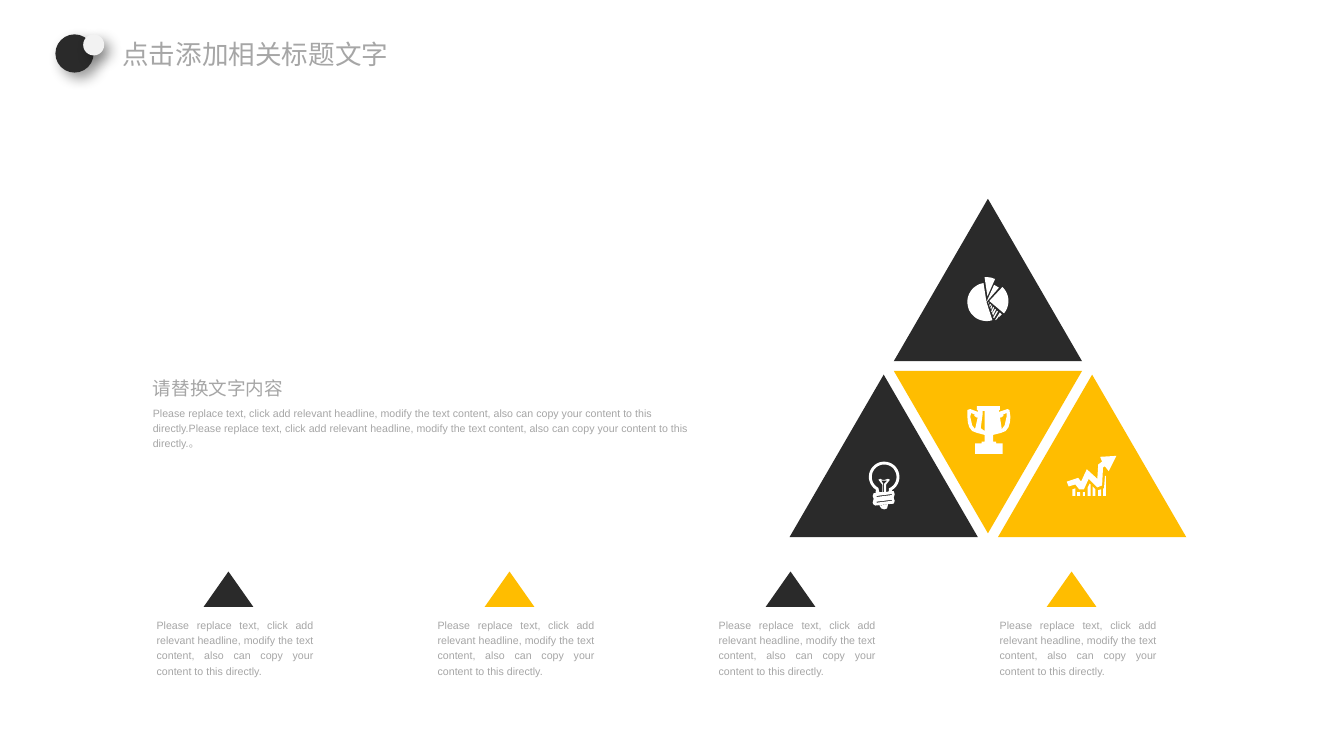
from dataclasses import dataclass
from math import cos, radians, sin

from lxml import etree
from pptx import Presentation
from pptx.dml.color import RGBColor
from pptx.enum.shapes import MSO_SHAPE
from pptx.enum.text import MSO_ANCHOR, MSO_AUTO_SIZE, PP_ALIGN
from pptx.oxml.ns import qn
from pptx.util import Inches, Pt

TRIANGLE = MSO_SHAPE.ISOSCELES_TRIANGLE
OVAL = MSO_SHAPE.OVAL
LEFT, JUSTIFY = PP_ALIGN.LEFT, PP_ALIGN.JUSTIFY
MIDDLE = MSO_ANCHOR.MIDDLE
NO_AUTOFIT = MSO_AUTO_SIZE.NONE
TITLE_ONLY = 5


@dataclass(frozen=True)
class Theme:
    """Colours, font and type sizes of the slide."""
    dark: str = "2A2A2A"
    gold: str = "FFBD00"
    white: str = "FFFFFF"
    pale: str = "F2F2F2"
    text: str = "A6A6A6"
    shadow: str = "000000"
    font: str = "Arial"
    title_size: int = 20
    heading_size: int = 14
    body_size: int = 8


THEME = Theme()
BODY = ("Please replace text, click add relevant headline, modify the text content, "
        "also can copy your content to this directly.")


def arc(x, y, radius, start, end, steps=30):
    """Return points along a circular arc, with angles in degrees."""
    angles = [radians(start + (end - start) * step / steps) for step in range(steps + 1)]
    return [(x + radius * cos(angle), y + radius * sin(angle)) for angle in angles]


PIE_CHART = [
    [(23, 25), *arc(23, 25, 20, -47, 40)],
    [(28, 8), (20, 26), *arc(20, 26, 20, 261, 72), (20, 26), (33, 11)],
    [(21, 20), (18, 0), (21, 0), (25, 0.5), (29, 2)],
    [(36, 39), (35, 38), (33, 42)],
    [(31, 44), (35, 38), (34, 37), (29, 45)],
    [(28, 43), (32, 36), (31, 35), (27, 42)],
    [(27, 40), (30, 34), (29, 33), (26, 38)],
    [(26, 37), (28, 32), (27, 31), (25, 36)],
    [(25, 34), (26, 30), (26, 29), (24, 32)],
    [(23, 31), (25, 29), (24, 28), (23, 29)],
    [(22, 28), (22, 26), (23, 27)],
]
TROPHY = [
    [(11, 4), (11, 6), (3, 3), (0, 4), (0, 11), (0.5, 17), (2, 22), (5, 26), (10, 28),
     (18, 30), (18, 37), (15, 37), (15, 39), (8, 39), (8, 50), (37, 50), (37, 39),
     (30, 39), (30, 37), (27, 37), (27, 30), (35, 28), (40, 26), (43, 22), (44.5, 17),
     (45, 11), (44, 4), (42, 3), (33, 6), (33, 4), (34, 4), (34, 0), (10, 0), (10, 4)],
    [(36, 24), (34, 11), (35, 12), (38, 10), (37, 9), (41, 7), (41, 11), (39, 20)],
    [(11, 11), (8, 24), (5, 20), (3, 11), (4, 7), (8, 9), (7, 10), (10, 12)],
    [(18, 5), (18, 26), (14, 23), (16, 8), (16, 5)],
]
GROWTH = [
    [(52, 0), (44, 16), (40, 11), (38, 12), (37, 31), (32, 33), (23, 24), (18, 35),
     (13, 35), (9, 30), (2, 32), (0, 27), (12, 23), (15, 27), (21, 14), (32, 24),
     (33, 9), (37, 6), (35, 1)],
    [(6, 42), (9, 42), (9, 34), (6, 35)],
    [(11, 42), (14, 42), (14, 38), (11, 38)],
    [(17, 42), (19, 42), (19, 38), (17, 38)],
    [(22, 42), (25, 42), (25, 30), (24, 29), (22, 33)],
    [(27, 42), (30, 42), (30, 35), (27, 32)],
    [(33, 42), (36, 42), (36, 35), (33, 36)],
    [(38, 42), (41, 42), (41, 21), (40, 21), (39, 34), (38, 34)],
]
BULB = [
    [*arc(16, 16, 16, 123, 418), (24, 31), (26, 31), (27, 34), (26, 38), (27, 41),
     (26, 44), (7, 46), (5, 45), (4, 43), (5, 39), (4, 36), (5, 33), (7, 33)],
    [*arc(16, 16, 13, 118, 422), (21, 28), (21, 31), (18, 32), (18, 24), (22, 19),
     (20, 18), (17, 19), (14, 19), (12, 18), (10, 19), (14, 24), (14, 32), (11, 32)],
    [(19, 20), (13, 20), (15, 23), (15, 32), (16, 32), (16, 23)],
    [(20, 45), (11, 46), (13, 49), (16, 50), (19, 49)],
    [(24, 40), (8, 42), (8, 43), (24, 41)],
    [(24, 34), (8, 36), (8, 37), (24, 35)],
]


def paint(shape, color):
    """Give a shape a flat fill with no line or shadow."""
    shape.shadow.inherit = False
    shape.fill.solid()
    shape.fill.fore_color.rgb = RGBColor.from_string(color)
    shape.line.fill.background()


def add_flat_shape(shapes, kind, box, color):
    """Add a preset shape with a flat fill."""
    shape = shapes.add_shape(kind, *map(Inches, box))
    paint(shape, color)
    return shape


def add_icon(shapes, left, top, contours):
    """Draw a white icon from contours in hundredths of an inch."""
    scaled = [[(x * 10, y * 10) for x, y in contour] for contour in contours]
    builder = shapes.build_freeform(*scaled[0][0], scale=Inches(0.001))
    builder.add_line_segments(scaled[0][1:])
    for contour in scaled[1:]:
        builder.move_to(*contour[0])
        builder.add_line_segments(contour[1:])
    paint(builder.convert_to_shape(Inches(left), Inches(top)), THEME.white)


def add_pyramid_part(slide, left, top, color, icon, icon_left, icon_top, rotation=0):
    """Group one large triangle with its icon."""
    shapes = slide.shapes.add_group_shape().shapes
    triangle = add_flat_shape(shapes, TRIANGLE, (left, top, 1.97, 1.7), color)
    triangle.rotation = rotation
    add_icon(shapes, icon_left, icon_top, icon)


def add_shadowed_circle(slide, left, top, size, color):
    """Add a circle with a soft shadow to its lower right."""
    circle = add_flat_shape(slide.shapes, OVAL, (left, top, size, size), color)
    effects = circle._element.spPr.find(qn("a:effectLst"))
    shadow = etree.SubElement(effects, qn("a:outerShdw"), blurRad=str(Pt(10)),
                              dist=str(Pt(6)), dir="2700000", algn="tl", rotWithShape="0")
    shade = etree.SubElement(shadow, qn("a:srgbClr"), val=THEME.shadow)
    etree.SubElement(shade, qn("a:alpha"), val="40000")


def write(paragraph, text, size, alignment=LEFT):
    """Write one grey run into a paragraph."""
    paragraph.alignment = alignment
    run = paragraph.add_run()
    run.text = text
    run.font.name = THEME.font
    run.font.size = Pt(size)
    run.font.color.rgb = RGBColor.from_string(THEME.text)


def add_text(slide, box, text, size, alignment=LEFT, wrap=True):
    """Add a text box with one paragraph."""
    frame = slide.shapes.add_textbox(*map(Inches, box)).text_frame
    frame.word_wrap = wrap
    paragraph = frame.paragraphs[0]
    paragraph.line_spacing = 1.2
    write(paragraph, text, size, alignment)


def set_title(slide, text):
    """Place and format the title placeholder."""
    title = slide.shapes.title
    title.left, title.top, title.width, title.height = map(Inches, (1.18, 0.36, 3.35, 0.4))
    frame = title.text_frame
    frame.auto_size = NO_AUTOFIT
    frame.vertical_anchor = MIDDLE
    write(frame.paragraphs[0], text, THEME.title_size)


def main():
    """Build the slide and save it."""
    presentation = Presentation()
    presentation.slide_width, presentation.slide_height = Inches(14.06), Inches(7.91)
    slide = presentation.slides.add_slide(presentation.slide_layouts[TITLE_ONLY])
    set_title(slide, "点击添加相关标题文字")
    add_shadowed_circle(slide, 0.58, 0.36, 0.4, THEME.dark)
    add_shadowed_circle(slide, 0.87, 0.36, 0.22, THEME.pale)

    add_pyramid_part(slide, 9.35, 3.88, THEME.gold, TROPHY, 10.12, 4.25, rotation=180)
    add_pyramid_part(slide, 9.35, 2.08, THEME.dark, PIE_CHART, 10.12, 2.9)
    add_pyramid_part(slide, 10.44, 3.92, THEME.gold, GROWTH, 11.16, 4.77)
    add_pyramid_part(slide, 8.26, 3.92, THEME.dark, BULB, 9.09, 4.83)

    add_text(slide, (1.5, 3.85, 1.58, 0.36), "请替换文字内容", THEME.heading_size, wrap=False)
    add_text(slide, (1.5, 4.18, 6.11, 0.59), BODY * 2 + "。", THEME.body_size)
    for column, color in enumerate((THEME.dark, THEME.gold) * 2):
        offset = column * 2.94
        add_flat_shape(slide.shapes, TRIANGLE, (2.13 + offset, 5.98, 0.52, 0.37), color)
        add_text(slide, (1.54 + offset, 6.4, 1.84, 0.73), BODY, THEME.body_size, JUSTIFY)
    presentation.save("out.pptx")


if __name__ == "__main__":
    main()
